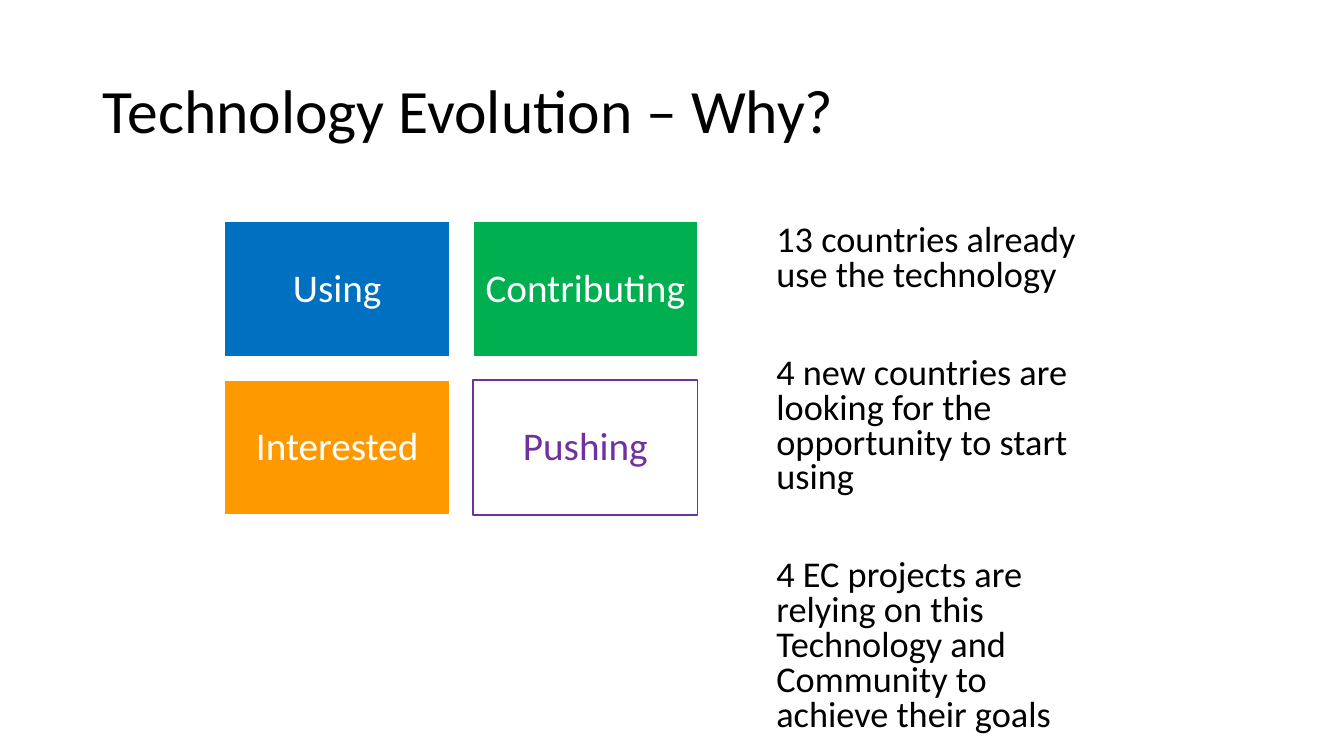
from pptx import Presentation
from pptx.dml.color import RGBColor as RGB
from pptx.enum.shapes import MSO_SHAPE as SHAPE
from pptx.enum.text import MSO_ANCHOR as ANCHOR, MSO_AUTO_SIZE as FIT, PP_ALIGN as ALIGN
from pptx.oxml.ns import qn
from pptx.util import Inches, Pt

# Content
TITLE = "Technology Evolution – Why?"
TILES = [  # label, fill, line, text
    ("Using", "blue", "white", "white"),
    ("Contributing", "green", "white", "white"),
    ("Interested", "orange", "white", "white"),
    ("Pushing", "white", "purple", "purple"),
]
REASONS = [
    "13 countries already use the technology",
    "4 new countries are looking for the opportunity to start using",
    "4 EC projects are relying on this Technology and Community to achieve their goals",
]

# Theme
THEME = {
    "font": "Calibri",
    "title": 44, "body": 25.9, "tile": 28,
    "black": "000000", "white": "FFFFFF", "blue": "0070C0",
    "green": "00B050", "orange": "FF9900", "purple": "7030A0",
}

# Layout in inches
TITLE_BOX = (0.92, 0.4, 11.5, 1.45)
BODY_BOX = (7.6, 2.18, 3.35, 5.16)
LEFT, TOP, WIDE, HIGH = 2.23, 2.2, 2.23, 1.34
GAP, COLS, INSET = 0.23, 2, 0.12


def color(name):
    return RGB.from_string(THEME[name])


def apply(item, values):
    for name, value in values.items():
        setattr(item, name, value)


def place(shape, box):
    names = ("left", "top", "width", "height")
    apply(shape, dict(zip(names, map(Inches, box))))


def write(para, text, size, ink, **values):
    run = para.add_run()
    run.text = text
    apply(run.font, {"name": THEME["font"], "size": Pt(THEME[size])})
    run.font.color.rgb = color(ink)
    apply(para, values)


deck = Presentation()
apply(deck, {"slide_width": Inches(13.33), "slide_height": Inches(7.5)})
slide = deck.slides.add_slide(deck.slide_layouts[1])
title, body = slide.placeholders

# Title
place(title, TITLE_BOX)
apply(title.text_frame, {"vertical_anchor": ANCHOR.MIDDLE, "auto_size": FIT.NONE})
write(title.text_frame.paragraphs[0], TITLE, "title", "black",
      alignment=ALIGN.LEFT, line_spacing=0.9)

# Reasons, unbulleted
place(body, BODY_BOX)
frame = body.text_frame
apply(frame, {"vertical_anchor": ANCHOR.TOP, "auto_size": FIT.NONE})
for i, text in enumerate(REASONS):
    para = frame.add_paragraph() if i else frame.paragraphs[0]
    write(para, text, "body", "black", alignment=ALIGN.LEFT,
          line_spacing=0.8, space_before=Pt(45 if i else 0))
    props = para._p.get_or_add_pPr()
    props.set("marL", "0")
    props.set("indent", "0")
    props.append(props.makeelement(qn("a:buNone"), {}))

# Tile grid
for i, (label, fill, line, ink) in enumerate(TILES):
    row, col = divmod(i, COLS)
    box = (LEFT + col * (WIDE + GAP), TOP + row * (HIGH + GAP), WIDE, HIGH)
    tile = slide.shapes.add_shape(SHAPE.RECTANGLE, *map(Inches, box))
    tile.shadow.inherit = False
    tile.fill.solid()
    tile.fill.fore_color.rgb = color(fill)
    tile.line.color.rgb = color(line)
    tile.line.width = Pt(1)
    sides = ("left", "top", "right", "bottom")
    apply(tile.text_frame, {f"margin_{side}": Inches(INSET) for side in sides})
    apply(tile.text_frame, {"vertical_anchor": ANCHOR.MIDDLE, "word_wrap": True})
    write(tile.text_frame.paragraphs[0], label, "tile", ink,
          alignment=ALIGN.CENTER, line_spacing=0.9)

deck.save("out.pptx")
